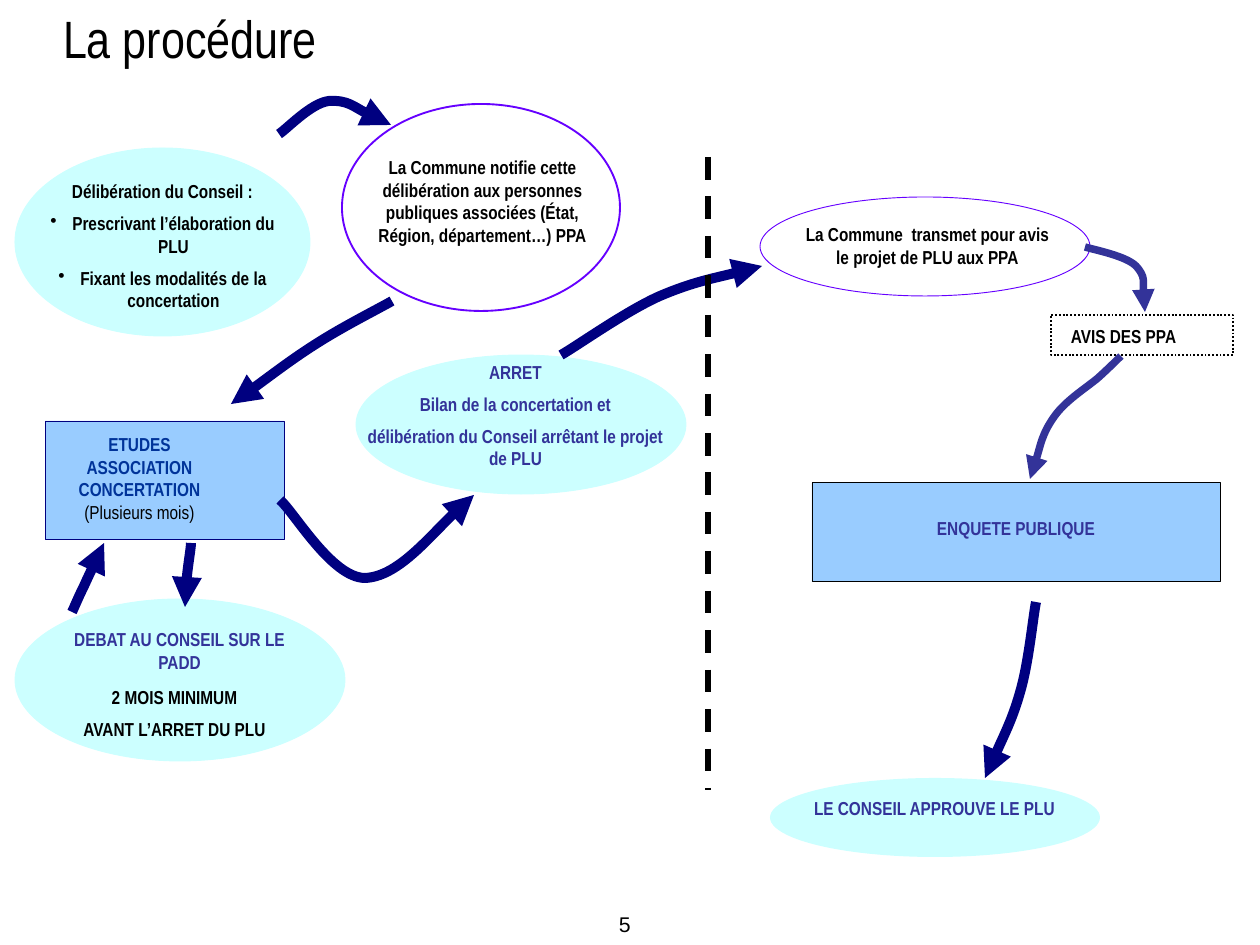
from dataclasses import dataclass
from typing import NamedTuple, Optional

import lxml.etree
import pptx
import pptx.dml.color
import pptx.enum.dml
import pptx.enum.shapes
import pptx.enum.text
import pptx.oxml.ns
import pptx.util

PX = 10160  # EMU per px, 90 px to the inch
qn = pptx.oxml.ns.qn
SHAPE = pptx.enum.shapes.MSO_SHAPE
DASH = pptx.enum.dml.MSO_LINE
ALIGN = pptx.enum.text.PP_ALIGN
ANCHOR = pptx.enum.text.MSO_ANCHOR


@dataclass(frozen=True)
class Theme:
    black: str = "000000"
    aqua: str = "CCFFFF"
    sky: str = "99CCFF"
    violet: str = "6600FF"
    navy: str = "000080"
    indigo: str = "333399"
    blue: str = "003399"
    narrow: str = "Arial Narrow"
    plain: str = "Arial"
    title: int = 42
    body: int = 15
    number: int = 17
    gap: float = 7.5
    bullet_indent: int = 22


T = Theme()


class Box(NamedTuple):
    x: int
    y: int
    w: int
    h: int


class Para(NamedTuple):
    text: str
    color: str = T.black
    bold: bool = True
    bullet: bool = False


@dataclass(frozen=True)
class Node:
    kind: SHAPE
    box: Box
    fill: Optional[str] = None
    line: Optional[str] = None
    width: float = 0.75
    dash: Optional[DASH] = None


@dataclass(frozen=True)
class Label:
    box: Box
    paras: tuple
    gap: float = T.gap
    wrap: bool = True


@dataclass(frozen=True)
class Arrow:
    points: tuple  # start, then three Bezier points for each curve
    color: str = T.navy
    width: int = 8


NODES = (
    Node(SHAPE.OVAL, Box(15, 148, 295, 188), T.aqua, T.aqua),
    Node(SHAPE.OVAL, Box(760, 197, 330, 99), None, T.violet),
    Node(SHAPE.OVAL, Box(342, 104, 278, 207), None, T.violet, 1.5),
    Node(SHAPE.RECTANGLE, Box(45, 421, 239, 119), T.sky, T.navy),
    Node(SHAPE.OVAL, Box(770, 778, 330, 79), T.aqua),
    Node(SHAPE.OVAL, Box(356, 355, 330, 139), T.aqua, T.aqua),
    Node(SHAPE.RECTANGLE, Box(1051, 315, 182, 40), None, T.black, 1.5, DASH.ROUND_DOT),
    Node(SHAPE.OVAL, Box(15, 599, 330, 162), T.aqua, T.aqua),
    Node(SHAPE.RECTANGLE, Box(812, 483, 409, 99), T.sky, T.black),
)

ARROWS = (
    # deliberation > notification > studies > adoption > opinion
    Arrow(((279, 134), (287, 129), (311, 103), (329, 101), (348, 100), (378, 121), (391, 125))),
    Arrow(((392, 301), (380, 308), (346, 325), (319, 342), (292, 359), (249, 392), (231, 404))),
    Arrow(((280, 500), (294, 512), (332, 578), (365, 578), (397, 577), (452, 512), (474, 495))),
    Arrow(((561, 355), (577, 346), (626, 311), (660, 296), (693, 282), (741, 272), (762, 266))),
    # studies <> debate
    Arrow(((191, 543), (191, 548), (188, 565), (187, 576), (186, 587), (186, 600), (185, 607))),
    Arrow(((72, 612), (74, 608), (78, 598), (84, 586), (89, 575), (100, 552), (104, 543))),
    # opinion > inquiry > approval
    Arrow(((1085, 247), (1095, 250), (1126, 256), (1136, 266), (1146, 277), (1143, 304),
           (1145, 312)), T.indigo, 6),
    Arrow(((1121, 356), (1117, 360), (1109, 368), (1098, 378), (1086, 388), (1065, 401),
           (1054, 417), (1042, 434), (1035, 466), (1030, 479)), T.indigo, 6),
    Arrow(((1036, 602), (1033, 617), (1029, 660), (1021, 689), (1013, 718), (993, 759),
           (985, 778))),
)

LABELS = (
    Label(Box(26, 174, 273, 129), (
        Para("Délibération du Conseil :"),
        Para("Prescrivant l’élaboration du PLU", bullet=True),
        Para("Fixant les modalités de la concertation", bullet=True))),
    Label(Box(791, 217, 273, 58), (
        Para("La Commune  transmet pour avis le projet de PLU aux PPA"),)),
    Label(Box(346, 150, 273, 104), (
        Para("La Commune notifie cette délibération aux personnes publiques associées "
             "(État, Région, département…) PPA"),)),
    Label(Box(65, 427, 149, 104), (
        Para("ETUDES", T.blue), Para("ASSOCIATION", T.blue), Para("CONCERTATION", T.blue),
        Para("(Plusieurs mois)", bold=False)), gap=0, wrap=False),
    Label(Box(798, 791, 273, 35), (Para("LE CONSEIL APPROUVE LE PLU", T.indigo),)),
    Label(Box(345, 355, 341, 126), (
        Para("ARRET", T.indigo), Para("Bilan de la concertation et", T.indigo),
        Para("délibération du Conseil arrêtant le projet de PLU", T.indigo))),
    Label(Box(987, 319, 273, 35), (Para("AVIS DES PPA"),)),
    Label(Box(43, 622, 273, 58), (Para("DEBAT AU CONSEIL SUR LE PADD", T.indigo),)),
    Label(Box(38, 680, 273, 69), (Para("2 MOIS MINIMUM"), Para("AVANT L’ARRET DU PLU"))),
    Label(Box(843, 511, 346, 35), (Para("ENQUETE PUBLIQUE", T.indigo),)),
)


def emu(box: Box) -> list:
    return [v * PX for v in box]


def rgb(color: str):
    return pptx.dml.color.RGBColor.from_string(color)


def write(tf, paras, *, size=T.body, font=T.narrow, align=ALIGN.CENTER, gap=T.gap,
          wrap=True, anchor=ANCHOR.TOP) -> None:
    tf.word_wrap, tf.vertical_anchor = wrap, anchor
    tf.auto_size = pptx.enum.text.MSO_AUTO_SIZE.NONE
    tf.margin_left = tf.margin_right = 13 * PX
    tf.margin_top = tf.margin_bottom = 6 * PX
    for i, para in enumerate(paras):
        p = tf.add_paragraph() if i else tf.paragraphs[0]
        p.alignment = align
        p.space_before = pptx.util.Pt(gap if i else 0)
        if para.bullet:
            pPr = p._p.get_or_add_pPr()
            pPr.set("marL", str(T.bullet_indent * PX))
            pPr.set("indent", str(-T.bullet_indent * PX))
            lxml.etree.SubElement(pPr, qn("a:buChar")).set("char", "•")
        r = p.add_run()
        r.text = para.text
        r.font.name, r.font.size, r.font.bold = font, pptx.util.Pt(size), para.bold
        r.font.color.rgb = rgb(para.color)


def style_line(line, color: str, width: float, dash=None) -> None:
    line.color.rgb = rgb(color)
    line.width = pptx.util.Pt(width)
    if dash:
        line.dash_style = dash


def draw_node(s, node: Node) -> None:
    sp = s.shapes.add_shape(node.kind, *emu(node.box))
    sp.shadow.inherit = False
    if node.fill:
        sp.fill.solid()
        sp.fill.fore_color.rgb = rgb(node.fill)
    else:
        sp.fill.background()
    if node.line:
        style_line(sp.line, node.line, node.width, node.dash)
    else:
        sp.line.fill.background()


def draw_arrow(s, arrow: Arrow) -> None:
    fb = s.shapes.build_freeform(*arrow.points[0], scale=PX)
    fb.add_line_segments(arrow.points[1:], close=False)
    sp = fb.convert_to_shape()
    sp.shadow.inherit = False
    sp.fill.background()
    style_line(sp.line, arrow.color, arrow.width)
    lxml.etree.SubElement(sp.line._get_or_add_ln(), qn("a:tailEnd")).set("type", "triangle")
    # Each three segments become one cubic curve
    segments = list(sp._element.iter(qn("a:lnTo")))
    for i in range(0, len(segments), 3):
        curve = lxml.etree.Element(qn("a:cubicBezTo"))
        segments[i].addprevious(curve)
        for segment in segments[i:i + 3]:
            curve.append(segment[0])
            segment.getparent().remove(segment)


def draw_label(s, label: Label) -> None:
    tb = s.shapes.add_textbox(*emu(label.box))
    write(tb.text_frame, label.paras, gap=label.gap, wrap=label.wrap)


def main() -> None:
    prs = pptx.Presentation()
    prs.slide_width, prs.slide_height = 1260 * PX, 945 * PX
    s = prs.slides.add_slide(prs.slide_layouts[5])

    # Title
    title = s.shapes.title
    title.left, title.top, title.width, title.height = emu(Box(50, -37, 1071, 149))
    write(title.text_frame, [Para("La procédure", bold=False)], size=T.title,
          align=ALIGN.LEFT, anchor=ANCHOR.MIDDLE)

    # Steps and the arrows between them
    for node in NODES:
        draw_node(s, node)
    for arrow in ARROWS:
        draw_arrow(s, arrow)

    # Divider between the two phases
    cx = s.shapes.add_connector(pptx.enum.shapes.MSO_CONNECTOR.STRAIGHT,
                                *emu(Box(708, 157, 708, 790)))
    style_line(cx.line, T.black, 4.5, DASH.DASH)
    lxml.etree.SubElement(cx._element.spPr, qn("a:effectLst"))

    # Wording and page number
    for label in LABELS:
        draw_label(s, label)
    number = s.shapes.add_textbox(*emu(Box(606, 905, 38, 39)))
    write(number.text_frame, [Para("5", bold=False)], size=T.number, font=T.plain,
          align=ALIGN.LEFT, wrap=False)

    prs.save("out.pptx")


if __name__ == "__main__":
    main()
